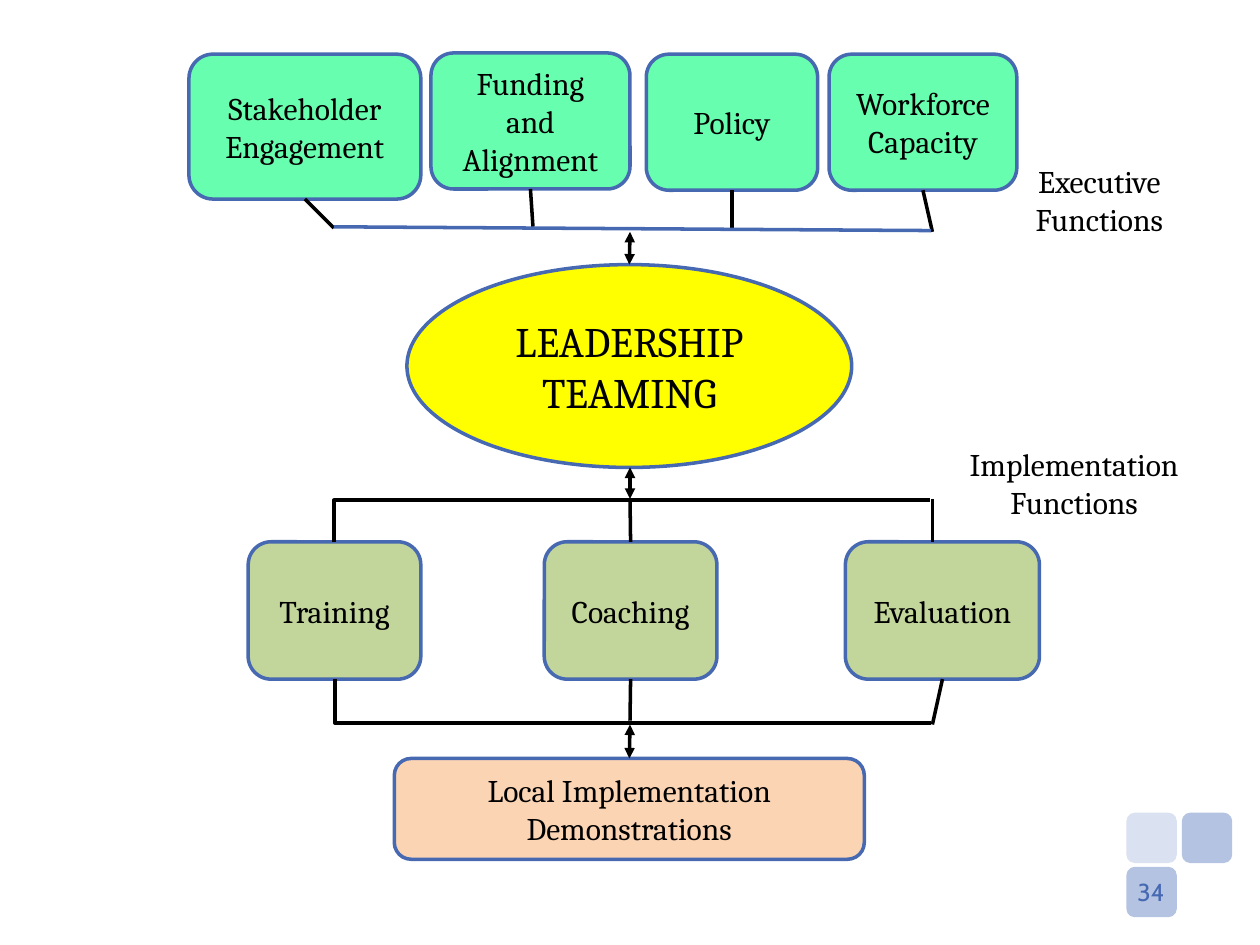
"""Build the leadership teaming diagram slide."""
from dataclasses import dataclass
from typing import Optional

from lxml import etree
from pptx import Presentation
from pptx import util as u
from pptx.dml.color import RGBColor
from pptx.enum import shapes, text
from pptx.oxml.ns import qn

COLUMNS, ROWS = 100, 75
CELL = u.Inches(0.1)
TOP, BOTTOM = 0, 2
LEFT_RAIL, CENTRE, RIGHT_RAIL = 26.5, 50, 74
ROUND, OVAL = shapes.MSO_SHAPE.ROUNDED_RECTANGLE, shapes.MSO_SHAPE.OVAL


@dataclass(frozen=True)
class Theme:
    """Colours, fonts and sizes."""
    executive: str = "68FEAF"
    leadership: str = "FFFF00"
    implementation: str = "C2D59B"
    local: str = "FBD4B4"
    outline: str = "4769B2"
    ink: str = "000000"
    tile: str = "B4C3E1"
    pale_tile: str = "DAE1F0"
    body_font: str = "Cambria"
    number_font: str = "Cabin"
    body: int = 18
    heading: int = 24
    number: int = 14
    stroke: int = 2


THEME = Theme()


@dataclass(frozen=True)
class Node:
    """A labelled shape, measured in grid cells."""
    label: str
    column: float
    row: float
    width: float
    height: float
    fill: Optional[str] = None
    outline: Optional[str] = THEME.outline
    geometry: shapes.MSO_SHAPE = ROUND
    size: int = THEME.body


@dataclass(frozen=True)
class Link:
    """A straight line between grid points, optionally joined to nodes."""
    start: tuple
    end: tuple
    start_node: Optional[str] = None
    start_site: int = BOTTOM
    end_node: Optional[str] = None
    end_site: int = TOP
    arrows: bool = False
    color: str = THEME.ink


@dataclass(frozen=True)
class Rail:
    """A quarter-turned elbow, given by its unrotated box."""
    start: tuple
    end: tuple


def cells(*values: float) -> list:
    """Turn grid cells into lengths."""
    return [int(value * CELL) for value in values]


def write(frame, label: str, size: int, font: str, color: str) -> None:
    """Put centred text in a frame."""
    for name, value in {"word_wrap": True, "vertical_anchor": text.MSO_ANCHOR.MIDDLE}.items():
        setattr(frame, name, value)
    paragraph = frame.paragraphs[0]
    paragraph.text = label
    paragraph.alignment = text.PP_ALIGN.CENTER
    for name, value in {"size": u.Pt(size), "name": font}.items():
        setattr(paragraph.font, name, value)
    paragraph.font.color.rgb = RGBColor.from_string(color)


def draw_node(slide, node: Node):
    """Draw a node and return its shape."""
    box = slide.shapes.add_shape(
        node.geometry, *cells(node.column, node.row, node.width, node.height))
    box.shadow.inherit = False
    if node.fill:
        box.fill.solid()
        box.fill.fore_color.rgb = RGBColor.from_string(node.fill)
    else:
        box.fill.background()
    if node.outline:
        box.line.color.rgb = RGBColor.from_string(node.outline)
        box.line.width = u.Pt(THEME.stroke)
    else:
        box.line.fill.background()
    if node.label:
        write(box.text_frame, node.label, node.size, THEME.body_font, THEME.ink)
    return box


def draw_line(slide, kind, start: tuple, end: tuple, color: str):
    """Draw an unshadowed connector."""
    line = slide.shapes.add_connector(kind, *cells(*start, *end))
    line.line.color.rgb = RGBColor.from_string(color)
    line.line.width = u.Pt(THEME.stroke)
    etree.SubElement(line._element.spPr, qn("a:effectLst"))
    return line


def draw_link(slide, link: Link, boxes: dict) -> None:
    """Draw a straight link and join it to its nodes."""
    line = draw_line(slide, shapes.MSO_CONNECTOR.STRAIGHT, link.start, link.end, link.color)
    if link.start_node:
        line.begin_connect(boxes[link.start_node], link.start_site)
    if link.end_node:
        line.end_connect(boxes[link.end_node], link.end_site)
    if link.arrows:
        for tag in ("a:headEnd", "a:tailEnd"):
            etree.SubElement(line.line._get_or_add_ln(), qn(tag), type="triangle")


def draw_rail(slide, rail: Rail) -> None:
    """Draw a one-bend connector turned by 270 degrees."""
    line = draw_line(slide, shapes.MSO_CONNECTOR.ELBOW, rail.start, rail.end, THEME.ink)
    properties = line._element.spPr
    properties.find(qn("a:xfrm")).set("rot", str(270 * 60000))
    properties.find(qn("a:prstGeom")).set("prst", "bentConnector2")


TILES = [
    Node("", 93.8, 64.5, 4, 4, THEME.tile, None),
    Node("", 89.4, 68.8, 4, 4, THEME.tile, None),
    Node("", 89.4, 64.5, 4, 4, THEME.pale_tile, None),
]
EXECUTIVE = [
    Node(label, column, row, width, height, THEME.executive)
    for label, column, row, width, height in (
        ("Stakeholder Engagement", 15, 4.3, 18.4, 11.5),
        ("Funding and Alignment", 34.2, 4.2, 15.8, 10.8),
        ("Policy", 51.3, 4.3, 13.6, 10.8),
        ("Workforce Capacity", 65.8, 4.3, 14.9, 10.8))
]
IMPLEMENTATION = [
    Node(label, column, 43, width, 10.9, THEME.implementation)
    for label, column, width in (
        ("Training", 19.7, 13.7), ("Coaching", 43.2, 13.7), ("Evaluation", 67.1, 15.4))
]
CORE = [
    Node("LEADERSHIP TEAMING", 32.3, 21, 35.3, 16.1, THEME.leadership,
         geometry=OVAL, size=THEME.heading),
    Node("Local Implementation Demonstrations", 31.3, 60.2, 37.3, 8, THEME.local),
]
CAPTIONS = [
    Node("Executive Functions", 71.7, 12.5, 31.1, 6.7, outline=None, geometry=OVAL),
    Node("Implementation Functions", 69.7, 35, 31.1, 6.7, outline=None, geometry=OVAL),
]
RAILS = [Rail((48.5, 17.7), (51.8, 65)), Rail((52, 32), (48.5, 79.3))]
LINKS = [
    Link((24.2, 15.8), (LEFT_RAIL, 18.1), "Stakeholder Engagement"),
    Link((42.1, 15), (42.3, 18), "Funding and Alignment"),
    Link((58.1, 15.1), (58.1, 18.3), "Policy"),
    Link((73.3, 15.1), (RIGHT_RAIL, 18.4), "Workforce Capacity"),
    Link((73.9, 18.3), (LEFT_RAIL, 18), color=THEME.outline),
    Link((CENTRE, 18.4), (CENTRE, 21), end_node="LEADERSHIP TEAMING", arrows=True),
    Link((CENTRE, 39.6), (CENTRE, 37.1), arrows=True),
    Link((CENTRE, 43), (CENTRE, 39.6), "Coaching", TOP),
    Link((RIGHT_RAIL, 43), (RIGHT_RAIL, 39.6)),
    Link((CENTRE, 57.2), (CENTRE, 53.9), end_node="Coaching", end_site=BOTTOM),
    Link((RIGHT_RAIL, 57.5), (74.8, 53.9), end_node="Evaluation", end_site=BOTTOM),
    Link((CENTRE, 60.1), (CENTRE, 57.5), "Local Implementation Demonstrations", TOP,
         arrows=True),
]


def main() -> None:
    """Build and save the slide."""
    deck = Presentation()
    deck.slide_width, deck.slide_height = cells(COLUMNS, ROWS)
    slide = deck.slides.add_slide(deck.slide_layouts[6])
    boxes = {node.label: draw_node(slide, node)
             for node in TILES + EXECUTIVE + CORE + IMPLEMENTATION}
    for rail in RAILS:
        draw_rail(slide, rail)
    for link in LINKS:
        draw_link(slide, link, boxes)
    for caption in CAPTIONS:
        draw_node(slide, caption)
    page_number = slide.shapes.add_textbox(*cells(88.4, 68.8, 5.9, 4))
    write(page_number.text_frame, "34", THEME.number, THEME.number_font, THEME.outline)
    deck.save("out.pptx")


if __name__ == "__main__":
    main()
